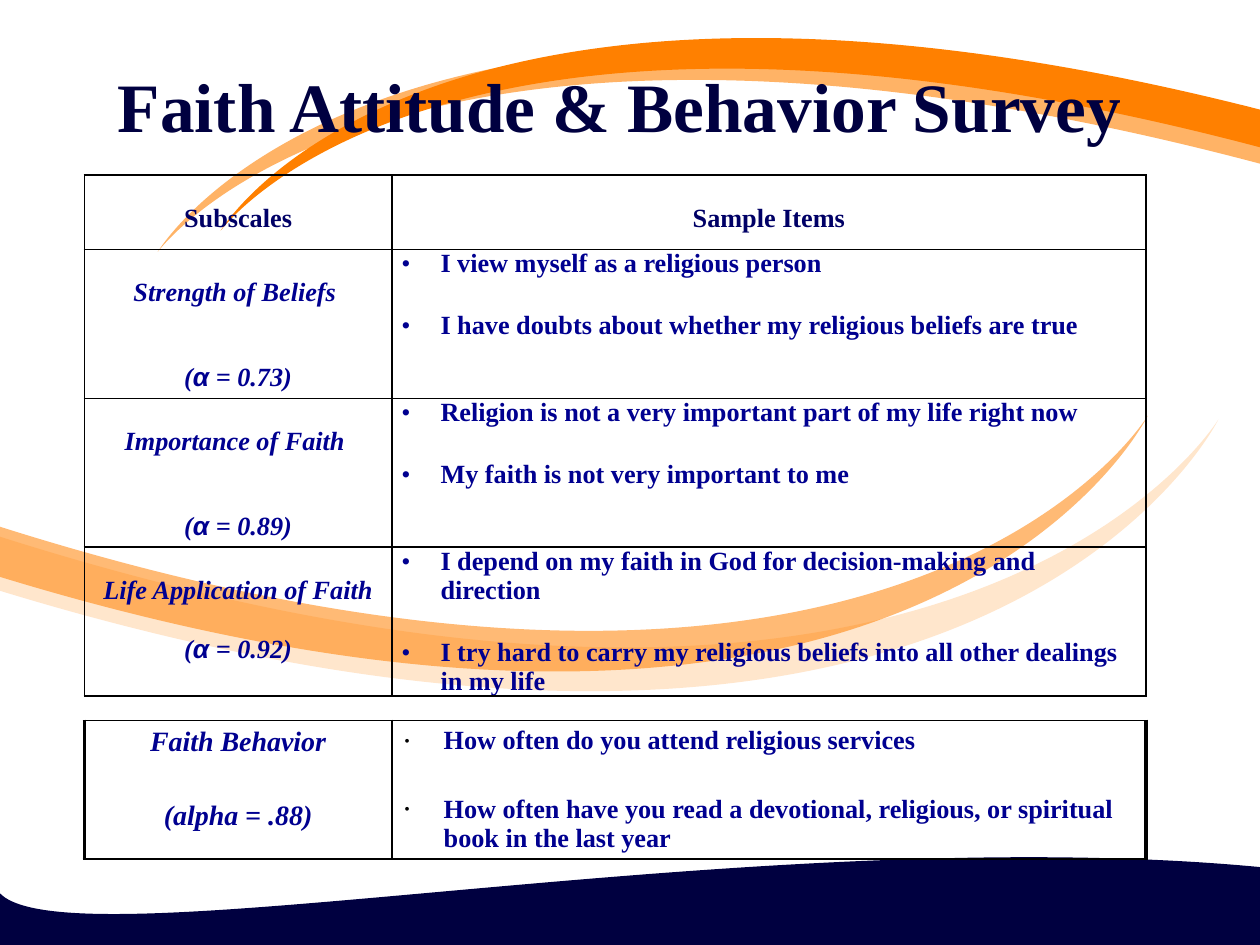
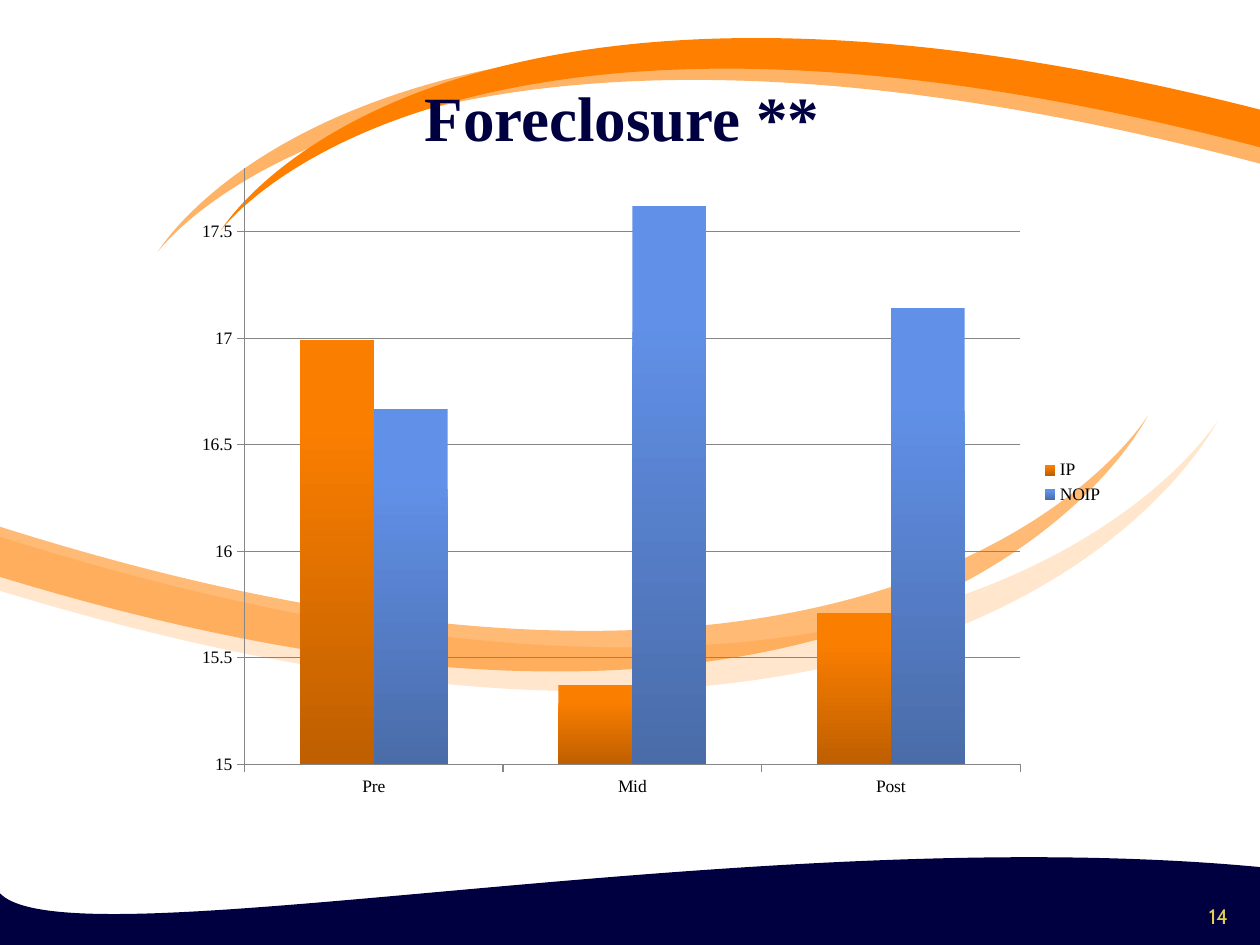
import lxml.etree
import pptx
import pptx.chart.data
import pptx.dml.color
import pptx.enum.chart
import pptx.enum.text
import pptx.oxml.ns
import pptx.util

Cm, Pt, qn = pptx.util.Cm, pptx.util.Pt, pptx.oxml.ns.qn
ALIGN = pptx.enum.text.PP_ALIGN
ANCHOR = pptx.enum.text.MSO_ANCHOR

# Shared look
COLORS = {
    "navy": "000040", "header": "000066", "text": "000090", "black": "000000",
    "orange": "FF8000", "light": "FFB366", "pale": "FFE6CC", "grid": "868686",
    "number": "E1CF50",
}
SERIF = "Times New Roman"
TITLE = {"name": SERIF, "bold": True, "color": "navy"}
HEADER = {"name": SERIF, "bold": True, "size": Pt(15), "color": "header"}
ITEM = HEADER | {"color": "text"}
SUBSCALE = ITEM | {"italic": True}
BEHAVIOR = SUBSCALE | {"size": Pt(16)}
NUMBER = {"name": "Cabin", "size": Pt(12), "color": "number"}
CHART_TEXT = {"name": SERIF, "size": Pt(10), "color": "black"}

# Footer wave in cm: start, two curves of three points, one straight corner
WAVE = [(0, 18.01), (1.42, 19.48), (15.14, 16.51), (25.4, 17.48),
        (25.4, 18.01), (25.43, 18.59), (25.43, 19.15), (0, 19.08)]
# Ribbons in cm: start, control, tip, control, end, colour, opacity in percent
RIBBONS = [
    ((0, 10.82), (19.38, 16.97), (24.56, 8.46), (19.86, 17.98), (0, 11.91), "pale", 100),
    ((25.4, 3.3), (7.85, -1.35), (3.18, 5.08), (7.42, -2.11), (25.4, 2.46), "light", 100),
    ((25.4, 2.97), (8.86, -1.4), (4.45, 4.65), (8.46, -2.11), (25.4, 2.21), "orange", 100),
    ((0, 10.62), (18.29, 16.41), (23.14, 8.38), (18.72, 17.35), (0, 11.63), "orange", 54),
]

COLUMNS = (6.2, 15.2)
SURVEY = [
    (["Strength of Beliefs ", "(α = 0.73)"],
     ["I view myself as a religious person",
      "I have doubts about whether my religious beliefs are true"]),
    (["Importance of Faith ", "(α = 0.89)"],
     ["Religion is not a very important part of my life right now",
      "My faith is not very important to me"]),
    (["Life Application of Faith (α = 0.92)"],
     ["I depend on my faith in God for decision-making and direction",
      "I try hard to carry my religious beliefs into all other dealings in my life"]),
]
FAITH_BEHAVIOR = (
    ["Faith Behavior", "(alpha = .88)"],
    ["How often do you attend religious services",
     "How often have you read a devotional, religious, or spiritual book in the last year"])


def rgb(name):
    return pptx.dml.color.RGBColor.from_string(COLORS.get(name, name))


def set_all(target, values):
    for name, value in values.items():
        setattr(target, name, value)


def format_font(font, style):
    set_all(font, {k: v for k, v in style.items() if k != "color"})
    font.color.rgb = rgb(style["color"])


def add_run(p, text, style):
    r = p.add_run()
    r.text = text
    format_font(r.font, style)


def write(tf, lines, style, **paragraph):
    """Fill a text frame; Greek alpha is set in Arial."""
    for i, line in enumerate(lines):
        p = tf.paragraphs[0] if i == 0 else tf.add_paragraph()
        set_all(p, paragraph)
        before, alpha, after = line.partition("α")
        add_run(p, before, style)
        if alpha:
            add_run(p, alpha, style | {"name": "Arial"})
            add_run(p, after, style)


# Background
def bend(shape, curves):
    """Turn the first segments, three at a time, into Bézier curves."""
    path = next(shape.element.iter(qn("a:path")))
    segments = path.findall(qn("a:lnTo"))
    for i in range(0, 3 * curves, 3):
        curve = lxml.etree.Element(qn("a:cubicBezTo"))
        segments[i].addprevious(curve)
        for segment in segments[i:i + 3]:
            curve.append(segment[0])
            path.remove(segment)


def add_outline(prs, s, points, color, opacity=100):
    """Draw a closed outline of two curves and move it to the slide master."""
    start, *rest = [(Cm(x), Cm(y)) for x, y in points]
    builder = s.shapes.build_freeform(*start)
    builder.add_line_segments(rest, close=True)
    shape = builder.convert_to_shape()
    bend(shape, curves=2)
    shape.shadow.inherit = False
    shape.fill.solid()
    shape.fill.fore_color.rgb = rgb(color)
    shape.line.fill.background()
    if opacity < 100:
        clr = shape.element.spPr.find(qn("a:solidFill")).find(qn("a:srgbClr"))
        lxml.etree.SubElement(clr, qn("a:alpha"), val=str(opacity * 1000))
    prs.slide_master.shapes.element.append(shape.element)


def add_background(prs, s):
    add_outline(prs, s, WAVE, "navy")
    for start, control_in, tip, control_out, end, color, opacity in RIBBONS:
        points = [start, control_in, tip, tip, tip, control_out, end]
        add_outline(prs, s, points, color, opacity)


# Text elements
def place(sp, left, top, width, height):
    set_all(sp, {"left": Cm(left), "top": Cm(top), "width": Cm(width), "height": Cm(height)})


def set_title(s, text, box, size, alignment):
    sp = s.shapes.title
    place(sp, *box)
    tf = sp.text_frame
    set_all(tf, {"word_wrap": True, "vertical_anchor": ANCHOR.MIDDLE,
                 "auto_size": pptx.enum.text.MSO_AUTO_SIZE.NONE})
    write(tf, [text], TITLE | {"size": Pt(size)}, alignment=alignment)


def add_slide_number(s, text):
    tf = s.shapes.add_textbox(Cm(23.93), Cm(17.53), Cm(1.27), Cm(1.32)).text_frame
    set_all(tf, {"word_wrap": True, "vertical_anchor": ANCHOR.BOTTOM})
    write(tf, [text], NUMBER, alignment=ALIGN.CENTER)


# Tables
def set_borders(cell, **widths):
    tc_pr = cell._tc.get_or_add_tcPr()
    for i, side in enumerate("LRTB"):
        ln = lxml.etree.Element(qn(f"a:ln{side}"), w=str(Pt(widths.get(side, 1))))
        fill = lxml.etree.SubElement(ln, qn("a:solidFill"))
        lxml.etree.SubElement(fill, qn("a:srgbClr"), val=COLORS["black"])
        tc_pr.insert(i, ln)


def add_table(s, top, heights):
    table = s.shapes.add_table(len(heights), len(COLUMNS), Cm(1.7), Cm(top),
                               Cm(sum(COLUMNS)), Cm(sum(heights))).table
    set_all(table, {"first_row": False, "horz_banding": False})
    for column, width in zip(table.columns, COLUMNS):
        column.width = Cm(width)
    for row, height in zip(table.rows, heights):
        row.height = Cm(height)
    for cell in table.iter_cells():
        cell.fill.background()
    return table


def write_items(tf, items, gap, bullet_color="text", bullet_size=100):
    write(tf, items, ITEM, alignment=ALIGN.LEFT)
    for i, p in enumerate(tf.paragraphs):
        if i:
            p.space_before = Pt(gap)
        p_pr = p._p.get_or_add_pPr()
        p_pr.set("marL", str(Cm(0.79)))
        p_pr.set("indent", str(-Cm(0.79)))
        clr = lxml.etree.SubElement(p_pr, qn("a:buClr"))
        lxml.etree.SubElement(clr, qn("a:srgbClr"), val=COLORS[bullet_color])
        lxml.etree.SubElement(p_pr, qn("a:buSzPct"), val=str(bullet_size * 1000))
        lxml.etree.SubElement(p_pr, qn("a:buFont"), typeface=SERIF)
        lxml.etree.SubElement(p_pr, qn("a:buChar"), char="•")


def add_survey_table(s):
    table = add_table(s, 3.53, [1.5] + [3] * len(SURVEY))
    for cell in table.iter_cells():
        set_borders(cell)
        set_all(cell, {"margin_left": Cm(0.19), "margin_right": Cm(0.19),
                       "margin_top": 0, "margin_bottom": 0})
    for column, heading in enumerate(("Subscales", "Sample Items")):
        write(table.cell(0, column).text_frame, [heading], HEADER,
              alignment=ALIGN.CENTER, line_spacing=2.0)
    for row, (subscale, items) in enumerate(SURVEY, start=1):
        write(table.cell(row, 0).text_frame, subscale, SUBSCALE, alignment=ALIGN.CENTER,
              line_spacing=2.0, space_before=Pt(12), space_after=Pt(3))
        write_items(table.cell(row, 1).text_frame, items, gap=18.8)


def add_behavior_table(s):
    table = add_table(s, 14.52, [2.8])
    label, items = table.cell(0, 0), table.cell(0, 1)
    set_borders(label, L=2.25)
    set_borders(items, R=2.25)
    write(label.text_frame, FAITH_BEHAVIOR[0], BEHAVIOR, alignment=ALIGN.CENTER)
    label.text_frame.paragraphs[1].space_before = Pt(24.5)
    write_items(items.text_frame, FAITH_BEHAVIOR[1], gap=22.5, bullet_color="black", bullet_size=60)


# Chart
def add_foreclosure_chart(s):
    data = pptx.chart.data.CategoryChartData()
    data.categories = ["Pre", "Mid", "Post"]
    data.add_series("IP", (16.99, 15.37, 15.71))
    data.add_series("NOIP", (16.67, 17.62, 17.14))
    chart = s.shapes.add_chart(pptx.enum.chart.XL_CHART_TYPE.COLUMN_CLUSTERED,
                               Cm(3.7), Cm(3.12), Cm(18.8), Cm(13.2), data).chart
    set_all(chart, {"has_title": False, "has_legend": True})
    format_font(chart.font, CHART_TEXT)
    set_all(chart.legend, {"include_in_layout": False,
                           "position": pptx.enum.chart.XL_LEGEND_POSITION.RIGHT})

    values = chart.value_axis
    set_all(values, {"minimum_scale": 15, "maximum_scale": 17.8, "major_unit": 0.5,
                     "has_major_gridlines": True})
    set_all(values.tick_labels, {"number_format": "General", "number_format_is_linked": False})
    for axis in (values, chart.category_axis):
        axis.major_tick_mark = pptx.enum.chart.XL_TICK_MARK.OUTSIDE
    for part in (values, chart.category_axis, values.major_gridlines):
        part.format.line.color.rgb = rgb("grid")
        part.format.line.width = Pt(0.75)

    plot = chart.plots[0]
    set_all(plot, {"gap_width": 150, "overlap": 0, "vary_by_categories": False})
    for series, shades in zip(plot.series, (("FA7E00", "BF5F00"), ("6190E8", "4A6CA8"))):
        fill = series.format.fill
        fill.gradient()
        fill.gradient_angle = 270
        for stop, shade, position in zip(fill.gradient_stops, shades, (0.2, 1)):
            stop.color.rgb = rgb(shade)
            stop.position = position


def main():
    prs = pptx.Presentation()
    set_all(prs, {"slide_width": Cm(25.4), "slide_height": Cm(19.05)})
    title_only = prs.slide_layouts[5]

    # Survey slide
    s = prs.slides.add_slide(title_only)
    add_background(prs, s)
    set_title(s, "Faith Attitude & Behavior Survey", (0, 0.53, 22.86, 3.18), 39.6, ALIGN.RIGHT)
    add_survey_table(s)
    add_behavior_table(s)

    # Foreclosure slide
    s = prs.slides.add_slide(title_only)
    set_title(s, "Foreclosure ** ", (1.27, 0.76, 22.86, 3.18), 36, ALIGN.CENTER)
    add_foreclosure_chart(s)
    add_slide_number(s, "14")

    prs.save("out.pptx")


if __name__ == "__main__":
    main()
